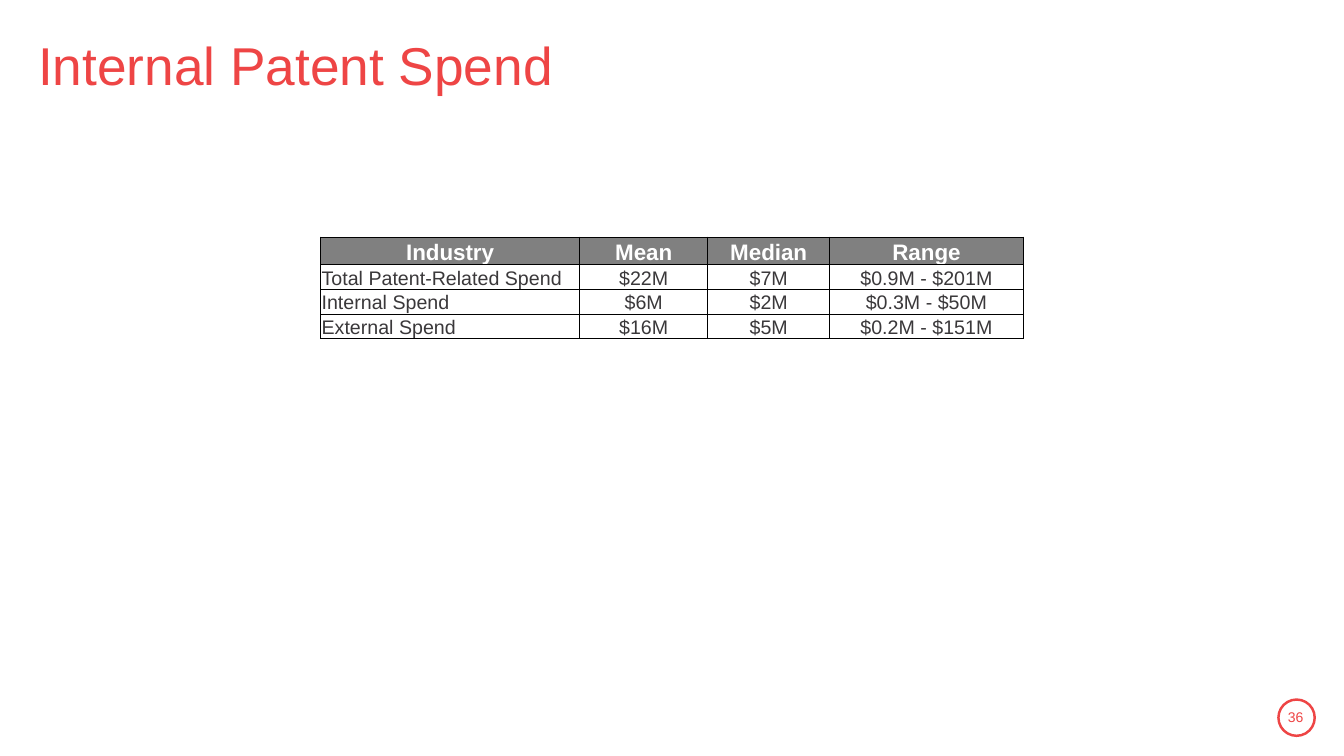
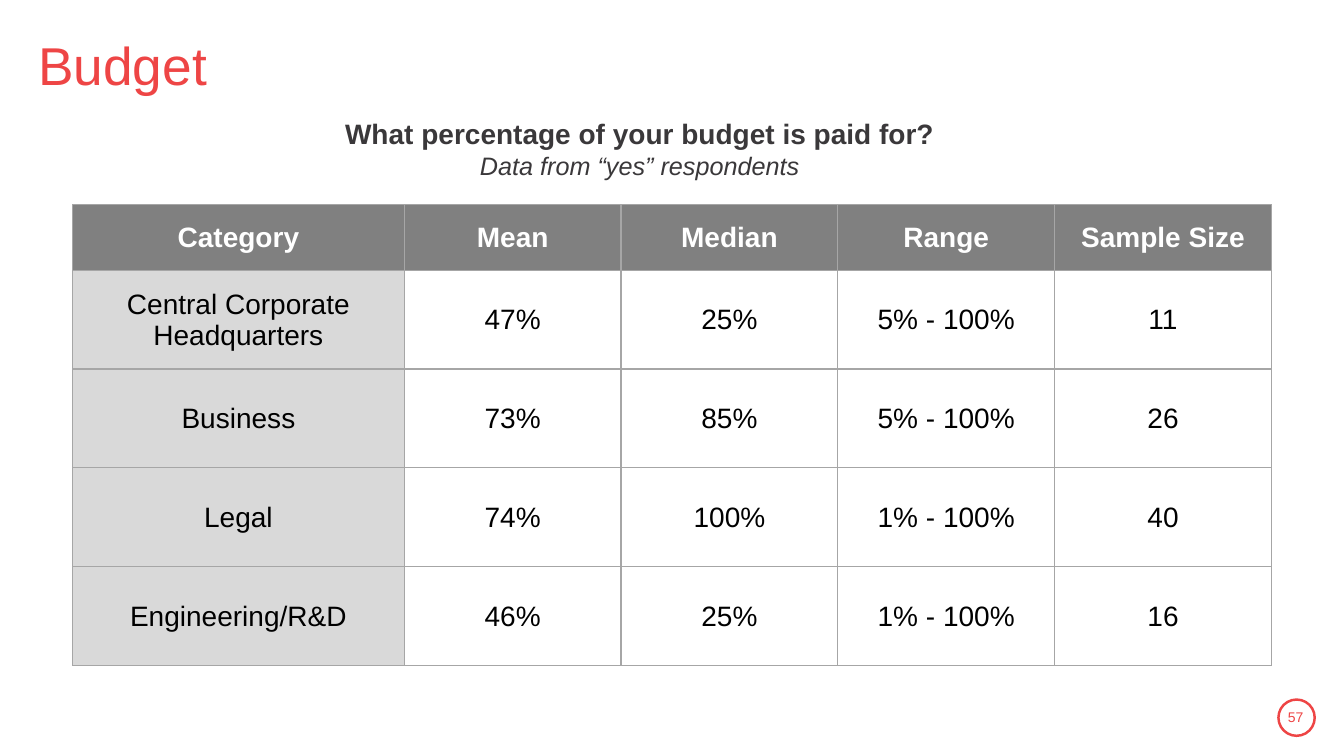
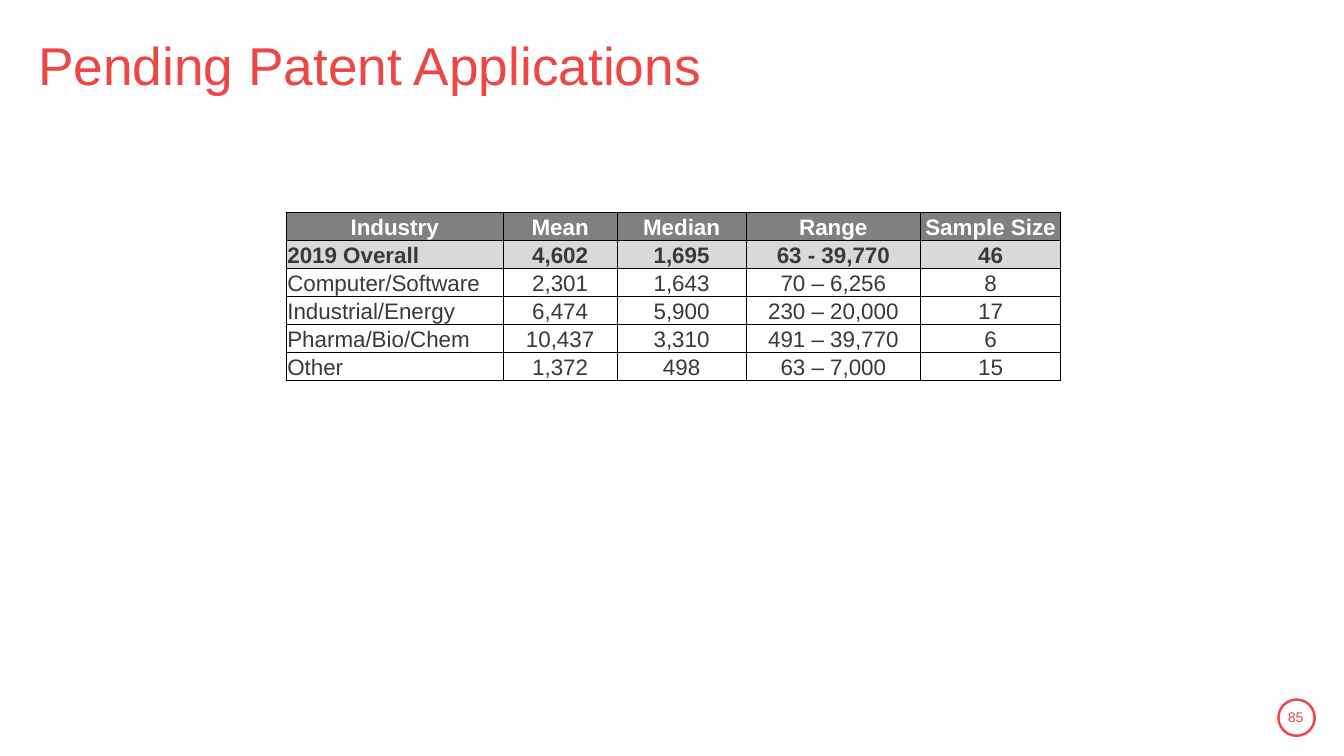
"""Build three survey slides, each with a title, a table and a page number."""
from lxml import etree
from pptx import Presentation
from pptx import util as u
from pptx.dml.color import RGBColor
from pptx.enum import shapes, text
from pptx.oxml.ns import qn

COLORS = {"accent": "EE4545", "ink": "3A383A", "black": "000000", "white": "FFFFFF",
          "header": "808080", "shade": "D9D9D9", "rule": "A6A6A6"}
FONT = "Arial"
COMPACT = {"header_size": 16, "body_size": 16, "ink": "ink", "rule": "black", "rule_width": 0.5,
           "anchor": text.MSO_ANCHOR.BOTTOM, "label_align": text.PP_ALIGN.LEFT,
           "header_row": 0.26, "body_row": 0.26, "shaded_rows": (), "shaded_columns": ()}
SPACIOUS = {**COMPACT, "header_size": 20, "body_size": 20, "ink": "black", "rule": "rule",
            "rule_width": 1, "anchor": text.MSO_ANCHOR.MIDDLE,
            "label_align": text.PP_ALIGN.CENTER, "header_row": 0.65, "body_row": 0.98,
            "shaded_columns": (0,)}
SLIDES = [
    {"title": "Internal Patent Spend", "page": 36, "at": (3.18, 2.35),
     "columns": (2.57, 1.27, 1.21, 1.92),
     "style": {**COMPACT, "body_size": 14, "body_row": 0.23},
     "rows": [
         ("Industry", "Mean", "Median", "Range"),
         ("Total Patent-Related Spend", "$22M", "$7M", "$0.9M - $201M"),
         ("Internal Spend", "$6M", "$2M", "$0.3M - $50M"),
         ("External Spend", "$16M", "$5M", "$0.2M - $151M")]},
    {"title": "Budget", "page": 57, "at": (0.72, 2.03),
     "columns": (3.29, 2.15, 2.15, 2.15, 2.15), "style": SPACIOUS,
     "question": ("What percentage of your budget is paid for?", "Data from “yes” respondents"),
     "rows": [
         ("Category", "Mean", "Median", "Range", "Sample Size"),
         ("Central Corporate Headquarters", "47%", "25%", "5% - 100%", "11"),
         ("Business", "73%", "85%", "5% - 100%", "26"),
         ("Legal", "74%", "100%", "1% - 100%", "40"),
         ("Engineering/R&D", "46%", "25%", "1% - 100%", "16")]},
    {"title": "Pending Patent Applications", "page": 85, "at": (2.84, 2.11),
     "columns": (2.15, 1.13, 1.28, 1.73, 1.39), "style": {**COMPACT, "shaded_rows": (1,)},
     "rows": [
         ("Industry", "Mean", "Median", "Range", "Sample Size"),
         ("2019 Overall", "4,602", "1,695", "63 - 39,770", "46"),
         ("Computer/Software", "2,301", "1,643", "70 – 6,256", "8"),
         ("Industrial/Energy", "6,474", "5,900", "230 – 20,000", "17"),
         ("Pharma/Bio/Chem", "10,437", "3,310", "491 – 39,770", "6"),
         ("Other", "1,372", "498", "63 – 7,000", "15")]},
]


def color(name):
    return RGBColor.from_string(COLORS[name])


def format_text(paragraph, size, ink, align, bold=False, italic=False):
    paragraph.alignment = align
    for run in paragraph.runs:
        font = run.font
        font.name, font.size, font.bold, font.italic = FONT, u.Pt(size), bold, italic
        font.color.rgb = color(ink)


def add_text(slide, box, content, anchor=text.MSO_ANCHOR.MIDDLE):
    frame = slide.shapes.add_textbox(*map(u.Inches, box)).text_frame
    frame.word_wrap = True
    frame.vertical_anchor = anchor
    frame.text = content
    return frame.paragraphs


def add_frame(slide, title, page):
    circle = slide.shapes.add_shape(shapes.MSO_SHAPE.OVAL, *map(u.Inches, (12.68, 6.94, 0.36, 0.36)))
    circle.shadow.inherit = False
    circle.fill.background()
    circle.line.color.rgb = color("accent")
    circle.line.width = u.Pt(1.75)
    heading = add_text(slide, (0.28, 0.24, 12.82, 0.87), title)[0]
    heading.line_spacing = 0.9
    format_text(heading, 38, "accent", text.PP_ALIGN.LEFT)
    number = add_text(slide, (12.62, 6.91, 0.46, 0.4), str(page))[0]
    format_text(number, 10, "accent", text.PP_ALIGN.CENTER)


def add_question(slide, lines):
    question, note = add_text(slide, (1.68, 1.11, 9.33, 0.74), "\n".join(lines), text.MSO_ANCHOR.TOP)
    format_text(question, 20, "ink", text.PP_ALIGN.CENTER, bold=True)
    format_text(note, 18, "ink", text.PP_ALIGN.CENTER, italic=True)


def set_borders(cell, rule, width):
    properties = cell._tc.get_or_add_tcPr()
    for side in ("lnL", "lnR", "lnT", "lnB"):
        line = etree.SubElement(properties, qn(f"a:{side}"), w=str(u.Pt(width)))
        fill = etree.SubElement(line, qn("a:solidFill"))
        etree.SubElement(fill, qn("a:srgbClr"), val=COLORS[rule])


def format_cell(cell, row, column, style):
    is_header, is_total = row == 0, row in style["shaded_rows"]
    shaded = is_total or column in style["shaded_columns"]
    cell.margin_left = cell.margin_right = cell.margin_top = u.Inches(0.01)
    cell.margin_bottom = 0
    cell.vertical_anchor = style["anchor"]
    set_borders(cell, style["rule"], style["rule_width"])
    cell.fill.solid()
    cell.fill.fore_color.rgb = color("header" if is_header else "shade" if shaded else "white")
    is_label = column == 0 and not is_header
    format_text(cell.text_frame.paragraphs[0],
                style["header_size" if is_header else "body_size"],
                "white" if is_header else style["ink"],
                style["label_align"] if is_label else text.PP_ALIGN.CENTER,
                bold=is_header or is_total)


def add_data_table(slide, at, columns, rows, style):
    heights = [style["header_row"]] + [style["body_row"]] * (len(rows) - 1)
    box = (*at, sum(columns), sum(heights))
    table = slide.shapes.add_table(len(rows), len(columns), *map(u.Inches, box)).table
    table.horz_banding = False
    for column, width in zip(table.columns, columns):
        column.width = u.Inches(width)
    for row_index, (values, height) in enumerate(zip(rows, heights)):
        table.rows[row_index].height = u.Inches(height)
        for column_index, value in enumerate(values):
            cell = table.cell(row_index, column_index)
            cell.text_frame.text = value
            format_cell(cell, row_index, column_index, style)


def main():
    presentation = Presentation()
    presentation.slide_width, presentation.slide_height = u.Inches(13.33), u.Inches(7.5)
    for content in SLIDES:
        slide = presentation.slides.add_slide(presentation.slide_layouts[6])
        add_frame(slide, content["title"], content["page"])
        add_data_table(slide, content["at"], content["columns"], content["rows"],
                       {**content["style"], "ink": "ink"} if content["style"] is not SPACIOUS
                       else SPACIOUS)
        if "question" in content:
            add_question(slide, content["question"])
    presentation.save("out.pptx")


if __name__ == "__main__":
    main()
